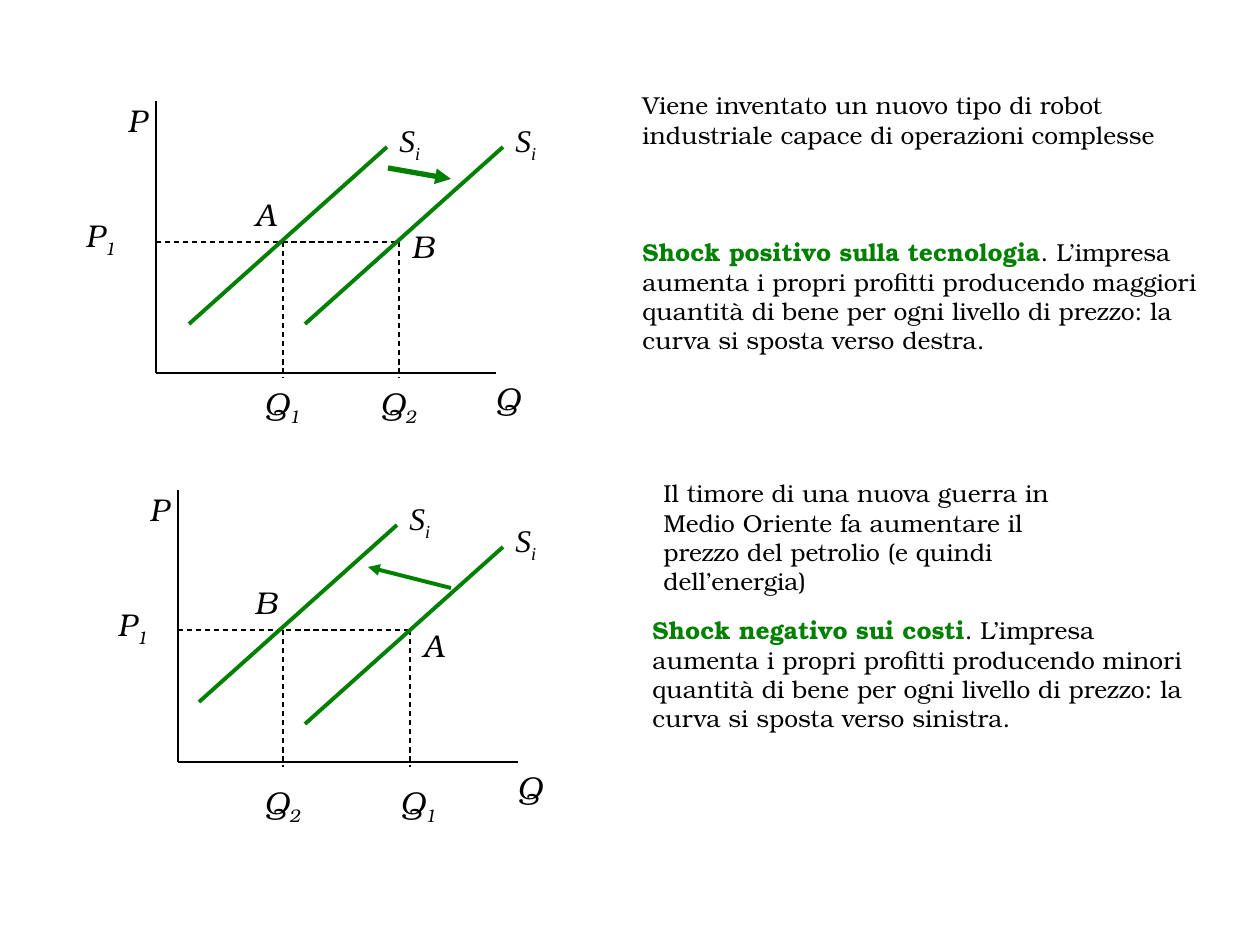
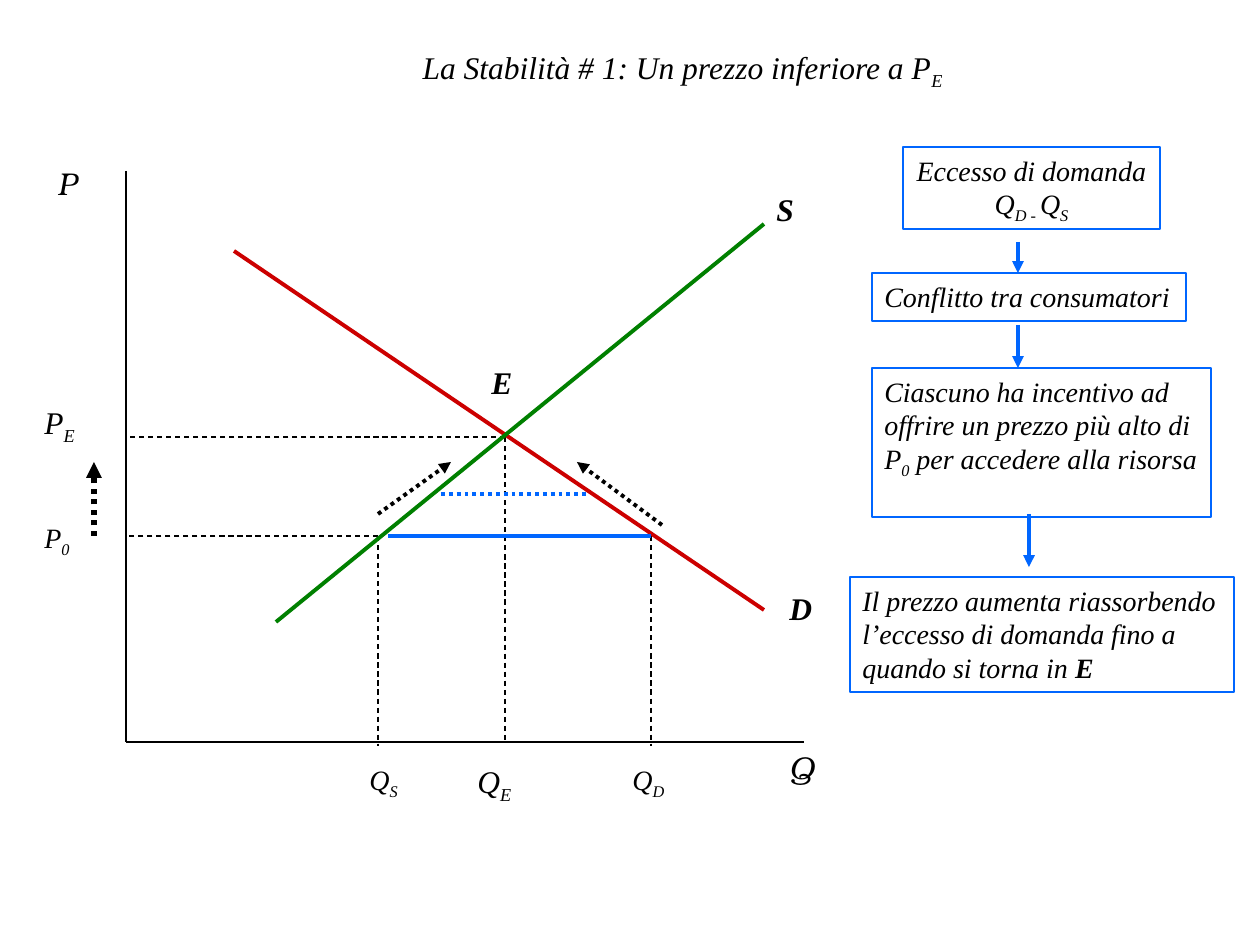
from lxml.etree import SubElement
from pptx import Presentation
from pptx.dml.color import RGBColor
from pptx.enum.dml import MSO_LINE
from pptx.enum.shapes import MSO_CONNECTOR, MSO_SHAPE
from pptx.enum.text import MSO_ANCHOR, MSO_AUTO_SIZE, PP_ALIGN
from pptx.oxml.ns import qn
from pptx.util import Pt

# Shared look
EMU_PER_PX = 914400 / 126
COLORS = {"ink": "000000", "green": "008000", "red": "CC0000", "blue": "0066FF"}
BONUM, TIMES = "TeX Gyre Bonum", "Times New Roman"
THIN, MEDIUM, THICK = 0.75, 2.25, 3
TITLE_ONLY, BLANK = 5, 6
DASH, DOTS = MSO_LINE.DASH, MSO_LINE.ROUND_DOT
LABEL_HEIGHT = 50


def indexed(letter, index):
    """Runs for a letter with a subscript."""
    return [(letter, "i"), (index, "i sub")]


# Slide 1: two supply shocks; a text is (left, top, width, height, runs)
CURVE_RUN, CURVE_RISE = 198, 177
AXIS_WIDTH, AXIS_HEIGHT = 340, 272
SHOCKS = [
    {
        "origin": (156, 373), "price": 242, "price_label": (73, 210),
        "curve_tops": [(387, 147), (503, 147)],
        "quantities": [(283, 252, "1"), (399, 368, "2")], "quantity_top": 378,
        "points": [("A", 242, 189), ("B", 399, 221)],
        "shift": ((388, 168), (451, 179), THICK),
        "texts": [
            (630, 84, 580, 72, [("Viene inventato un nuovo tipo di robot industriale "
                                 "capace di operazioni complesse", "")]),
            (630, 231, 580, 130, [
                ("Shock positivo sulla tecnologia", "b green"),
                (". L’impresa aumenta i propri profitti producendo maggiori quantità "
                 "di bene per ogni livello di prezzo: la curva si sposta verso destra.", "")]),
        ],
    },
    {
        "origin": (178, 762), "price": 630, "price_label": (105, 599),
        "curve_tops": [(397, 525), (503, 547)],
        "quantities": [(283, 252, "2"), (410, 388, "1")], "quantity_top": 777,
        "points": [("B", 242, 577), ("A", 410, 620)],
        "shift": ((451, 588), (368, 567), MEDIUM),
        "texts": [
            (651, 472, 467, 101, [("Il timore di una nuova guerra in Medio Oriente fa aumentare "
                                   "il prezzo del petrolio (e quindi dell’energia)", "")]),
            (640, 609, 567, 180, [
                ("Shock negativo sui costi", "b green"),
                (". L’impresa aumenta i propri profitti producendo minori quantità "
                 "di bene per ogni livello di prezzo: la curva si sposta verso sinistra.", "")]),
        ],
    },
]

# Slide 2: market equilibrium
TITLE = indexed("La Stabilità # 1: Un prezzo inferiore a P", "E")
ORIGIN, AXIS_TOP, AXIS_RIGHT = (126, 742), 171, 804
PRICE_E, PRICE_0 = 437, 536
QUANTITY_S, QUANTITY_E, QUANTITY_D = 378, 505, 651
MARKET_LABELS = [  # left, top, width, font, size, runs
    (45, 158, 84, BONUM, 18, [("P", "i")]),
    (777, 742, 84, BONUM, 18, [("Q", "i")]),
    (32, 397, 74, TIMES, 18, indexed("P", "E")),
    (32, 514, 55, TIMES, 16, indexed("P", "0")),
    (357, 756, 57, TIMES, 16, indexed("Q", "S")),
    (465, 756, 82, TIMES, 18, indexed("Q", "E")),
    (620, 756, 61, TIMES, 16, indexed("Q", "D")),
    (479, 357, 48, TIMES, 18, [("E", "b i")]),
    (764, 184, 46, TIMES, 18, [("S", "b i")]),
    (777, 583, 50, TIMES, 18, [("D", "b i")]),
]
MARKET_LINES = [  # start, end, colour, width, dash, arrow
    ((234, 251), (764, 610), "red", MEDIUM, None, False),
    ((276, 622), (764, 224), "green", MEDIUM, None, False),
    ((388, PRICE_0), (QUANTITY_D, PRICE_0), "blue", MEDIUM, None, False),
    ((441, 494), (588, 494), "blue", MEDIUM, DOTS, False),
    ((94, PRICE_0), (94, 462), "ink", THICK, DOTS, True),
    ((378, 514), (451, 462), "ink", MEDIUM, DOTS, True),
    ((662, 525), (577, 462), "ink", MEDIUM, DOTS, True),
]
STEPS = [  # left, top, width, height, alignment, paragraphs
    (903, 147, 257, 82, PP_ALIGN.CENTER, [
        [("Eccesso di domanda", "i")],
        [("Q", "i"), ("D - ", "i sub"), ("Q", "i"), ("S", "i sub")]]),
    (872, 273, 314, 48, PP_ALIGN.LEFT, [[("Conflitto tra consumatori", "i")]]),
    (872, 368, 339, 149, PP_ALIGN.LEFT, [
        indexed("Ciascuno ha incentivo ad offrire un prezzo più alto di P", "0")
        + [(" per accedere alla risorsa", "i")]]),
    (850, 577, 384, 115, PP_ALIGN.LEFT, [
        [("Il prezzo aumenta riassorbendo l’eccesso di domanda fino a quando si torna in ", "i"),
         ("E", "b i")]]),
]
STEP_ARROWS = [(1018, 242, 273), (1018, 325, 368), (1029, 514, 567)]  # x, top, bottom


def px(value):
    return round(value * EMU_PER_PX)


def color(name):
    return RGBColor.from_string(COLORS[name])


def write(shape, paragraphs, font, size, alignment=PP_ALIGN.LEFT):
    frame = shape.text_frame
    frame.word_wrap = True
    frame.auto_size = MSO_AUTO_SIZE.NONE
    frame.vertical_anchor = MSO_ANCHOR.TOP
    for number, runs in enumerate(paragraphs):
        paragraph = frame.add_paragraph() if number else frame.paragraphs[0]
        paragraph.alignment = alignment
        for text, style in runs:
            flags = style.split()
            run = paragraph.add_run()
            run.text = text
            run.font.name, run.font.size = font, Pt(size)
            run.font.bold, run.font.italic = "b" in flags, "i" in flags
            run.font.color.rgb = color("green" if "green" in flags else "ink")
            if "sub" in flags:
                run._r.get_or_add_rPr().set("baseline", "-25000")


def add_text(slide, left, top, width, height, runs, font=BONUM, size=18):
    box = slide.shapes.add_textbox(px(left), px(top), px(width), px(height))
    write(box, [runs], font, size)


def add_line(slide, start, end, line_color="ink", width=THIN, dash=None, arrow=False):
    connector = slide.shapes.add_connector(
        MSO_CONNECTOR.STRAIGHT, *(px(value) for value in (*start, *end)))
    connector.line.color.rgb = color(line_color)
    connector.line.width = Pt(width)
    if dash:
        connector.line.dash_style = dash
    properties = connector._element.spPr
    if arrow:
        SubElement(properties.find(qn("a:ln")), qn("a:tailEnd"), type="triangle")
    SubElement(properties, qn("a:effectLst"))


def add_axes(slide, origin, top, right):
    add_line(slide, (origin[0], top), origin)
    add_line(slide, origin, (right, origin[1]))


def add_shock(slide, shock):
    x, y = shock["origin"]
    top, right = y - AXIS_HEIGHT, x + AXIS_WIDTH
    price = shock["price"]
    # Axes and guides
    add_axes(slide, (x, y), top, right)
    add_text(slide, x - 41, top - 6, 43, LABEL_HEIGHT, [("P", "i")])
    add_text(slide, right - 13, y, 43, LABEL_HEIGHT, [("Q", "i")])
    add_text(slide, *shock["price_label"], 66, LABEL_HEIGHT, indexed("P", "1"))
    add_line(slide, (x, price), (shock["quantities"][-1][0], price), dash=DASH)
    for quantity, label_left, index in shock["quantities"]:
        add_line(slide, (quantity, price), (quantity, y + 5), dash=DASH)
        add_text(slide, label_left, shock["quantity_top"], 74, LABEL_HEIGHT, indexed("Q", index))
    # Supply curves and the shift between them
    for curve_x, curve_y in shock["curve_tops"]:
        add_line(slide, (curve_x, curve_y), (curve_x - CURVE_RUN, curve_y + CURVE_RISE),
                 "green", MEDIUM)
        add_text(slide, curve_x, curve_y - 32, 50, LABEL_HEIGHT, indexed("S", "i"), TIMES)
    start, end, width = shock["shift"]
    add_line(slide, start, end, "green", width, arrow=True)
    for name, left, label_top in shock["points"]:
        add_text(slide, left, label_top, 66, LABEL_HEIGHT, [(name, "i")])
    # Explanation
    for text in shock["texts"]:
        add_text(slide, *text, size=14)


def add_market(slide):
    title = slide.shapes.title
    title.left, title.top, title.width, title.height = px(410), px(42), px(558), px(50)
    write(title, [TITLE], TIMES, 18)
    # Diagram
    add_axes(slide, ORIGIN, AXIS_TOP, AXIS_RIGHT)
    for price, quantity in ((PRICE_E, QUANTITY_E), (PRICE_0, QUANTITY_S)):
        add_line(slide, (quantity, price), (ORIGIN[0], price), dash=DASH)
    for quantity, price, overshoot in ((QUANTITY_S, PRICE_0, 4), (QUANTITY_E, PRICE_E, 0),
                                       (QUANTITY_D, PRICE_0, 4)):
        add_line(slide, (quantity, price), (quantity, ORIGIN[1] + overshoot), dash=DASH)
    for line in MARKET_LINES:
        add_line(slide, *line)
    for left, top, width, font, size, runs in MARKET_LABELS:
        add_text(slide, left, top, width, LABEL_HEIGHT, runs, font, size)
    # Chain of steps
    for left, top, width, height, alignment, paragraphs in STEPS:
        box = slide.shapes.add_shape(MSO_SHAPE.RECTANGLE, px(left), px(top), px(width), px(height))
        box.shadow.inherit = False
        box.fill.background()
        box.line.color.rgb = color("blue")
        box.line.width = Pt(THIN)
        write(box, paragraphs, TIMES, 16, alignment)
    for x, top, bottom in STEP_ARROWS:
        add_line(slide, (x, top), (x, bottom), "blue", MEDIUM, arrow=True)


def main():
    presentation = Presentation()
    presentation.slide_width, presentation.slide_height = px(1260), px(945)
    layouts = presentation.slide_layouts
    shocks_slide = presentation.slides.add_slide(layouts[BLANK])
    for shock in SHOCKS:
        add_shock(shocks_slide, shock)
    add_market(presentation.slides.add_slide(layouts[TITLE_ONLY]))
    presentation.save("out.pptx")


if __name__ == "__main__":
    main()
